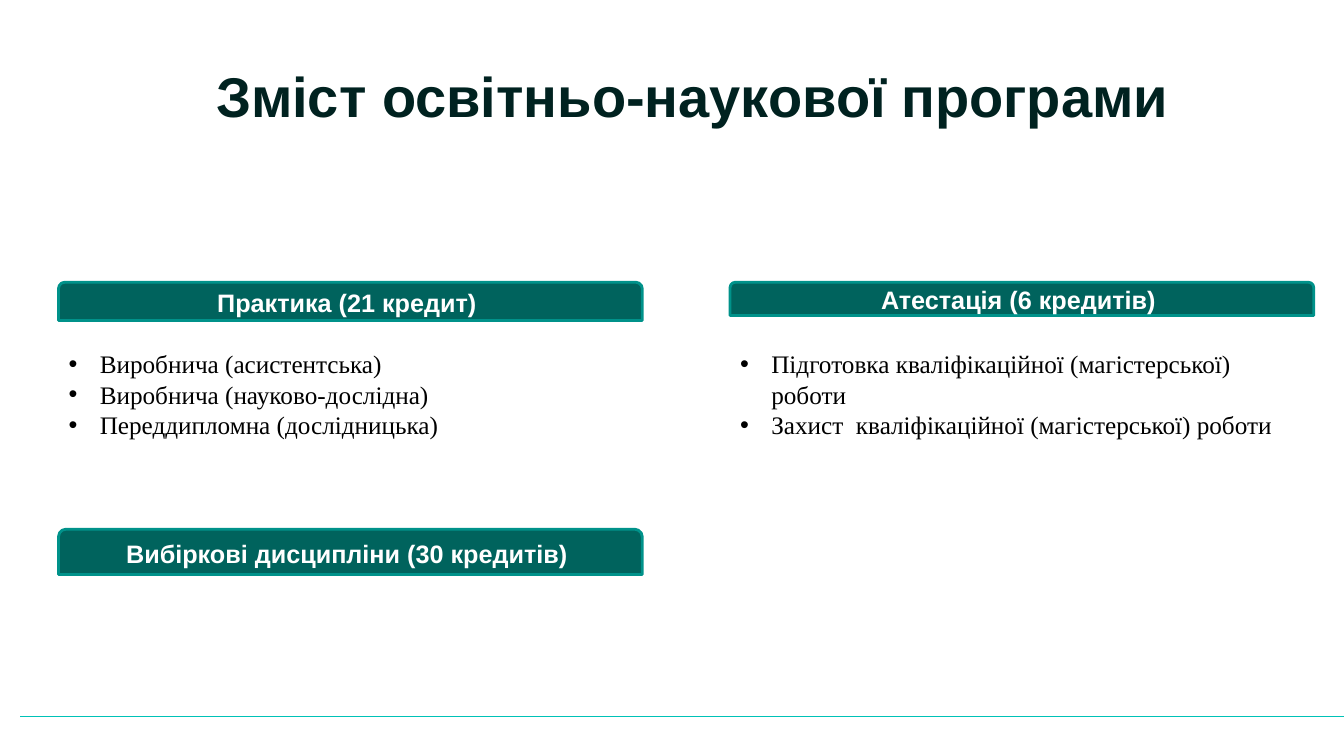
from lxml import etree
from pptx import Presentation
from pptx.dml import color
from pptx.enum import shapes, text
from pptx.oxml import ns
from pptx.util import Inches, Pt

LEFT, RIGHT = 0.58, 7.24


def rgb(value):
    return color.RGBColor.from_string(value)


def write(frame, lines, font="Arial", size=18, ink="FFFFFF", bold=False,
          align=text.PP_ALIGN.CENTER, anchor=text.MSO_ANCHOR.MIDDLE, bullet=None):
    frame.word_wrap = True
    frame.auto_size = text.MSO_AUTO_SIZE.NONE
    frame.vertical_anchor = anchor
    for index, line in enumerate(lines):
        paragraph = frame.add_paragraph() if index else frame.paragraphs[0]
        paragraph.alignment = align
        paragraph.space_before = Pt(0)
        if bullet:
            properties = paragraph._p.get_or_add_pPr()
            properties.set("marL", str(Inches(0.31)))
            properties.set("indent", str(-Inches(0.31)))
            etree.SubElement(properties, ns.qn("a:buFont")).set("typeface", "Arial")
            etree.SubElement(properties, ns.qn("a:buChar")).set("char", bullet)
        run = paragraph.add_run()
        run.text = line
        run.font.name = font
        run.font.size = Pt(size)
        run.font.bold = bold
        run.font.color.rgb = rgb(ink)


presentation = Presentation()
presentation.slide_width = Inches(13.33)
presentation.slide_height = Inches(7.5)
slide = presentation.slides.add_slide(presentation.slide_layouts.get_by_name("Two Content"))

# Footer rule
rule = slide.shapes.add_connector(shapes.MSO_CONNECTOR.STRAIGHT,
                                  Inches(0.2), Inches(7.11), Inches(13.33), Inches(7.11))
rule.line.color.rgb = rgb("00C2B7")
rule.line.width = Pt(0.75)
etree.SubElement(rule._element.spPr, ns.qn("a:effectLst"))

# Title
title = slide.shapes.title
title.left, title.top, title.width, title.height = map(Inches, (1.29, 0.49, 11.15, 0.91))
write(title.text_frame, ["Зміст освітньо-наукової програми"], size=40, ink="002220", bold=True)

# Section headings
headings = [
    (LEFT, 2.8, 0.38, "Практика (21 кредит) "),
    (RIGHT, 2.8, 0.33, "Атестація (6 кредитів) "),
    (LEFT, 5.25, 0.45, "Вибіркові дисципліни (30 кредитів) "),
]
for left, top, height, label in headings:
    heading = slide.shapes.add_shape(shapes.MSO_SHAPE.ROUND_2_SAME_RECTANGLE,
                                     Inches(left), Inches(top), Inches(5.79), Inches(height))
    heading.shadow.inherit = False
    heading.fill.solid()
    heading.fill.fore_color.rgb = rgb("00635D")
    heading.line.color.rgb = rgb("00928A")
    heading.line.width = Pt(2)
    write(heading.text_frame, [label], bold=True)

# Lists under the headings
lists = [
    (1, LEFT, 6.09, ["Виробнича (асистентська)",
                     "Виробнича (науково-дослідна)",
                     "Переддипломна (дослідницька)"]),
    (2, RIGHT, 5.56, ["Підготовка кваліфікаційної (магістерської) роботи",
                      "Захист  кваліфікаційної (магістерської) роботи"]),
]
for placeholder, left, width, items in lists:
    body = slide.placeholders[placeholder]
    body.left, body.top, body.width, body.height = map(Inches, (left, 3.41, width, 1.01))
    write(body.text_frame, items, font="Times New Roman", ink="000000", bullet="•",
          align=text.PP_ALIGN.LEFT, anchor=text.MSO_ANCHOR.TOP)

presentation.save("out.pptx")
